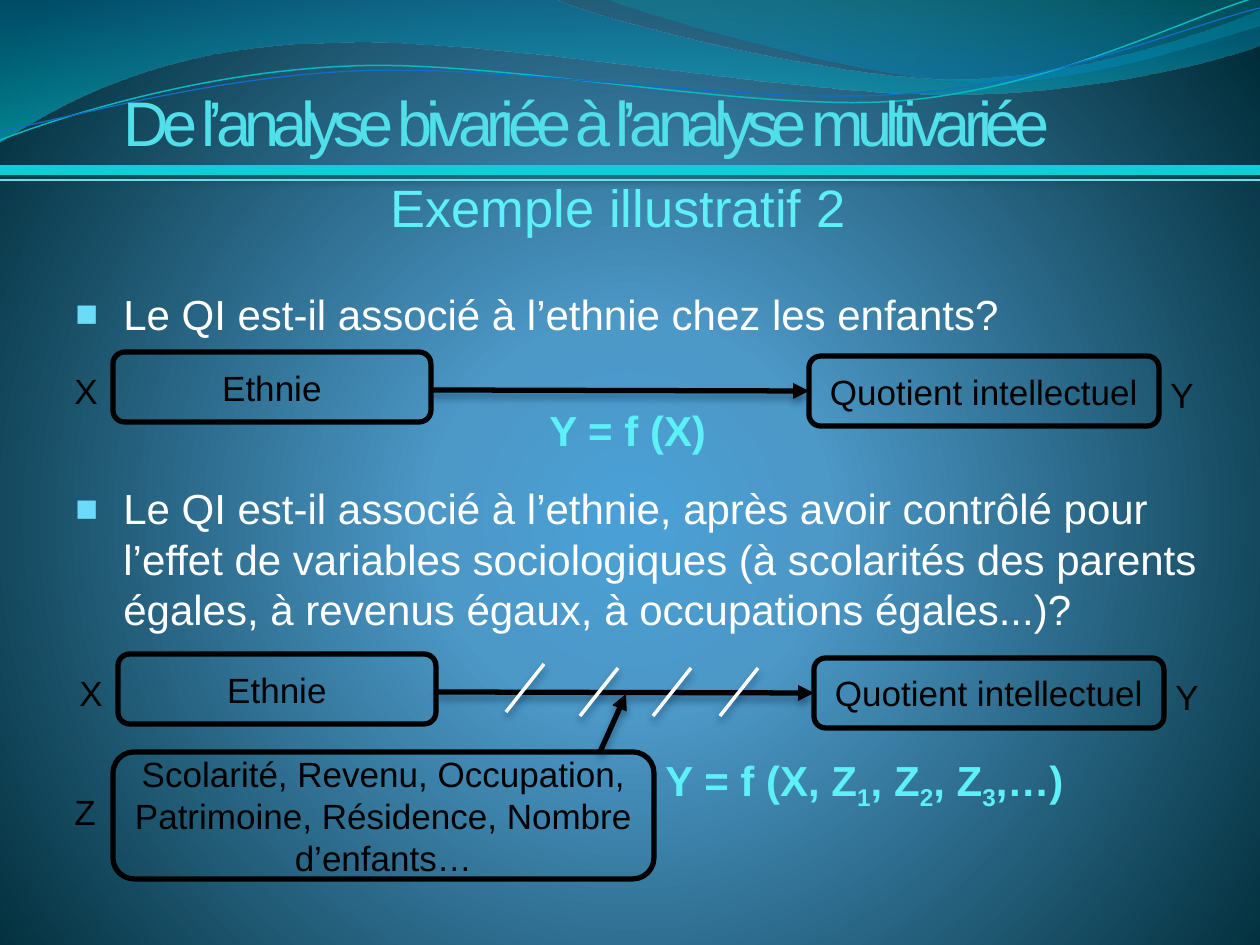
from lxml import etree
from pptx import Presentation
from pptx.dml.color import RGBColor
from pptx.enum.shapes import MSO_CONNECTOR, MSO_SHAPE
from pptx.enum.text import MSO_ANCHOR, PP_ALIGN
from pptx.oxml import parse_xml
from pptx.oxml.ns import nsdecls, qn
from pptx.util import Emu, Pt

STRAIGHT = MSO_CONNECTOR.STRAIGHT
ROUNDED = MSO_SHAPE.ROUNDED_RECTANGLE
LEFT, CENTER = PP_ALIGN.LEFT, PP_ALIGN.CENTER
MIDDLE, BOTTOM = MSO_ANCHOR.MIDDLE, MSO_ANCHOR.BOTTOM

EMU_PER_PX = 914400 / 126
FONT = "Arial"
COLORS = {
    "black": "000000", "white": "FFFFFF", "title": "51E0EA",
    "accent": "5EF0F7", "bullet": "6BDBFA", "rule": "0BD0D9",
    "thin_rule": "77D9E8", "teal": "0AB8BF", "blue": "0F6FC6",
    "rule_shadow": "024B4E", "shadow": "042747",
}
# Gradient stops: position %, colour, opacity %
BACKGROUND = [(0, "4AA0D6", 100), (25, "4C98C7", 100), (100, "002C38", 100)]
CIRCLE = ('<a:path path="circle"><a:fillToRect l="10000" t="110000" '
          'r="10000" b="100000"/></a:path>')
DOWNWARD = '<a:lin ang="5400000" scaled="0"/>'

# Outlines in px: a pair is a straight step, six numbers are a Bézier curve
BANDS = [
    ([(0, 0), (554, -1), (600, 21, 837, 79, 955, 79),
      (1074, 79, 1207, 33, 1260, 11), (1261, 45),
      (1239, 55, 1096, 96, 940, 94), (784, 94, 481, 35, 324, 43),
      (163, 45, 58, 105, -1, 142)],
     [(0, "0074A1", 45), (100, "00C6CF", 55)]),
    ([(604, -1), (641, 14, 859, 78, 969, 82),
      (1079, 87, 1211, 40, 1260, 26), (1260, 0)],
     [(0, "00A1A9", 30), (80, "008BBF", 45)]),
]
STRANDS = [
    ([(0, 140), (60, 117, 199, 72, 349, 66), (498, 59, 747, 112, 898, 101),
      (1050, 89, 1182, 19, 1257, -3)], "teal", 0.85),
    ([(0, 131), (59, 121, 207, 77, 357, 71), (508, 64, 752, 106, 903, 94),
      (1053, 84, 1186, 26, 1260, 8)], "blue", 0.75),
]
QUESTIONS = [
    "Le QI est-il associé à l’ethnie chez les enfants?",
    "Le QI est-il associé à l’ethnie, après avoir contrôlé pour l’effet de "
    "variables sociologiques (à scolarités des parents égales, à revenus "
    "égaux, à occupations égales...)?",
]


def px(n):
    return Emu(round(n * EMU_PER_PX))


def rgb(name):
    return RGBColor.from_string(COLORS[name])


def set_gradient(fill, element, stops, shade):
    fill.gradient()
    old = next(element.iter(qn("a:gradFill")))
    gs = "".join(
        f'<a:gs pos="{pos * 1000}"><a:srgbClr val="{color}">'
        f'<a:alpha val="{alpha * 1000}"/></a:srgbClr></a:gs>'
        for pos, color, alpha in stops)
    old.getparent().replace(old, parse_xml(
        f'<a:gradFill {nsdecls("a")} rotWithShape="1">'
        f'<a:gsLst>{gs}</a:gsLst>{shade}</a:gradFill>'))


def add_outline(s, outline, close):
    points = [(px(x), px(y)) for step in outline
              for x, y in zip(step[::2], step[1::2])]
    builder = s.shapes.build_freeform(*points[0])
    builder.add_line_segments(points[1:], close=close)
    sp = builder.convert_to_shape()
    sp.shadow.inherit = False
    # Turn each run of three straight steps into one Bézier curve
    steps = iter(list(sp.element.iter(qn("a:lnTo"))))
    for step in outline[1:]:
        first = next(steps)
        if len(step) == 6:
            first.tag = qn("a:cubicBezTo")
            for follower in (next(steps), next(steps)):
                first.append(follower[0])
                follower.getparent().remove(follower)
    return sp


def style_paragraph(p, size, color, align=LEFT, bold=False):
    p.alignment = align
    p.font.name, p.font.size, p.font.bold = FONT, Pt(size), bold
    p.font.color.rgb = rgb(color)


def style_text(sp, text, size, color, **style):
    sp.text_frame.word_wrap = True
    p = sp.text_frame.paragraphs[0]
    p.text = text
    style_paragraph(p, size, color, **style)
    return sp


def add_text(s, box, text, size, color, **style):
    sp = s.shapes.add_textbox(*map(px, box))
    return style_text(sp, text, size, color, **style)


def add_box(s, box, text):
    sp = s.shapes.add_shape(ROUNDED, *map(px, box))
    sp.shadow.inherit = False
    sp.fill.background()
    sp.line.color.rgb, sp.line.width = rgb("black"), Pt(3)
    sp.text_frame.vertical_anchor = MIDDLE
    return style_text(sp, text, 20, "black", align=CENTER)


def add_line(s, ends, color, width, shadow=None, arrow=False):
    line = s.shapes.add_connector(STRAIGHT, *map(px, ends))
    line.line.color.rgb, line.line.width = rgb(color), Pt(width)
    if arrow:
        ln = next(line.element.iter(qn("a:ln")))
        etree.SubElement(ln, qn("a:tailEnd"), type="triangle")
    effects = etree.SubElement(line.element.spPr, qn("a:effectLst"))
    if shadow:
        effects.append(parse_xml(
            f'<a:outerShdw {nsdecls("a")} blurRad="{Pt(4.5)}" dist="{Pt(3)}" '
            f'dir="5400000" rotWithShape="0"><a:srgbClr val="{COLORS[shadow]}">'
            '<a:alpha val="48000"/></a:srgbClr></a:outerShdw>'))
    return line


def add_waves(s):
    for outline, stops in BANDS:
        sp = add_outline(s, outline, True)
        set_gradient(sp.fill, sp.element, stops, DOWNWARD)
        sp.line.fill.background()
    for outline, color, width in STRANDS:
        sp = add_outline(s, outline, False)
        sp.fill.background()
        sp.line.color.rgb, sp.line.width = rgb(color), Pt(width)


def add_questions(s):
    sp = s.shapes.add_textbox(*map(px, (63, 282, 1169, 620)))
    tf = sp.text_frame
    tf.word_wrap = True
    for i, question in enumerate(QUESTIONS):
        p = tf.add_paragraph() if i else tf.paragraphs[0]
        p.text = question
        style_paragraph(p, 24, "white")
        p.space_before, p.space_after = Pt(76.5 if i else 18), Pt(6)
    for pPr in sp.element.iter(qn("a:pPr")):
        pPr.set("marL", str(px(48)))
        pPr.set("indent", str(px(-48)))
        bullet = parse_xml(
            f'<a:pPr {nsdecls("a")}><a:buClr><a:srgbClr val="{COLORS["bullet"]}"/>'
            f'</a:buClr><a:buSzPct val="90000"/><a:buFont typeface="{FONT}"/>'
            '<a:buChar char="■"/></a:pPr>')
        for part in list(bullet):
            pPr.find(qn("a:defRPr")).addprevious(part)


def add_relation(s, x, y):
    add_box(s, (x, y, 318, 70), "Ethnie")
    effect = add_box(s, (x + 696, y + 4, 350, 70), "Quotient intellectuel")
    arrow = add_line(s, (x + 318, y + 38, x + 696, y + 39), "black", 3, "shadow", True)
    arrow.end_connect(effect, 1)
    add_text(s, (x - 51, y + 11, 69, 55), "X", 20, "black")
    add_text(s, (x + 1045, y + 15, 69, 55), "Y", 20, "black")


def add_formula(s):
    sp = add_text(s, (653, 748, 486, 63), "Y = f (X, Z", 24, "accent", bold=True)
    for part in ("1", ", Z", "2", ", Z", "3", ",…)"):
        sp.text_frame.paragraphs[0].add_run().text = part
    for r in list(sp.element.iter(qn("a:r")))[1::2]:
        r.get_or_add_rPr().set("baseline", "-25000")


def main():
    prs = Presentation()
    prs.slide_width, prs.slide_height = px(1260), px(945)
    s = prs.slides.add_slide(prs.slide_layouts[6])

    # Background and decoration
    set_gradient(s.background.fill, s.element, BACKGROUND, CIRCLE)
    add_waves(s)

    # Heading
    add_line(s, (0, 170, 1260, 170), "rule", 6, "rule_shadow")
    add_line(s, (0, 180, 1260, 180), "thin_rule", 0.75)
    title = add_text(s, (-42, 68, 1260, 91), "De l’analyse bivariée à l’analyse multivariée",
                     36, "title", align=CENTER)
    tf = title.text_frame
    tf.vertical_anchor = BOTTOM
    tf.margin_left = tf.margin_top = tf.margin_bottom = 0
    tf.margin_right = px(3)
    next(title.element.iter(qn("a:r"))).get_or_add_rPr().set("spc", "-380")
    add_text(s, (-5, 169, 1261, 77), "Exemple illustratif 2 ", 30, "accent", align=CENTER)

    # Questions and their diagrams
    add_questions(s)
    add_relation(s, 113, 352)
    add_text(s, (537, 398, 186, 63), "Y = f (X)", 24, "accent", bold=True)
    add_relation(s, 118, 654)

    # Control variables
    add_box(s, (113, 752, 541, 127),
            "Scolarité, Revenu, Occupation, Patrimoine, Résidence, Nombre d’enfants…")
    add_text(s, (62, 784, 69, 55), "Z", 20, "black")
    add_line(s, (600, 752, 626, 694), "black", 3, "shadow", True)
    for x, y in ((544, 664), (618, 668), (691, 668), (758, 668)):
        add_line(s, (x, y, x - 38, y + 48), "white", 2, "shadow")
    add_formula(s)

    prs.save("out.pptx")


if __name__ == "__main__":
    main()
